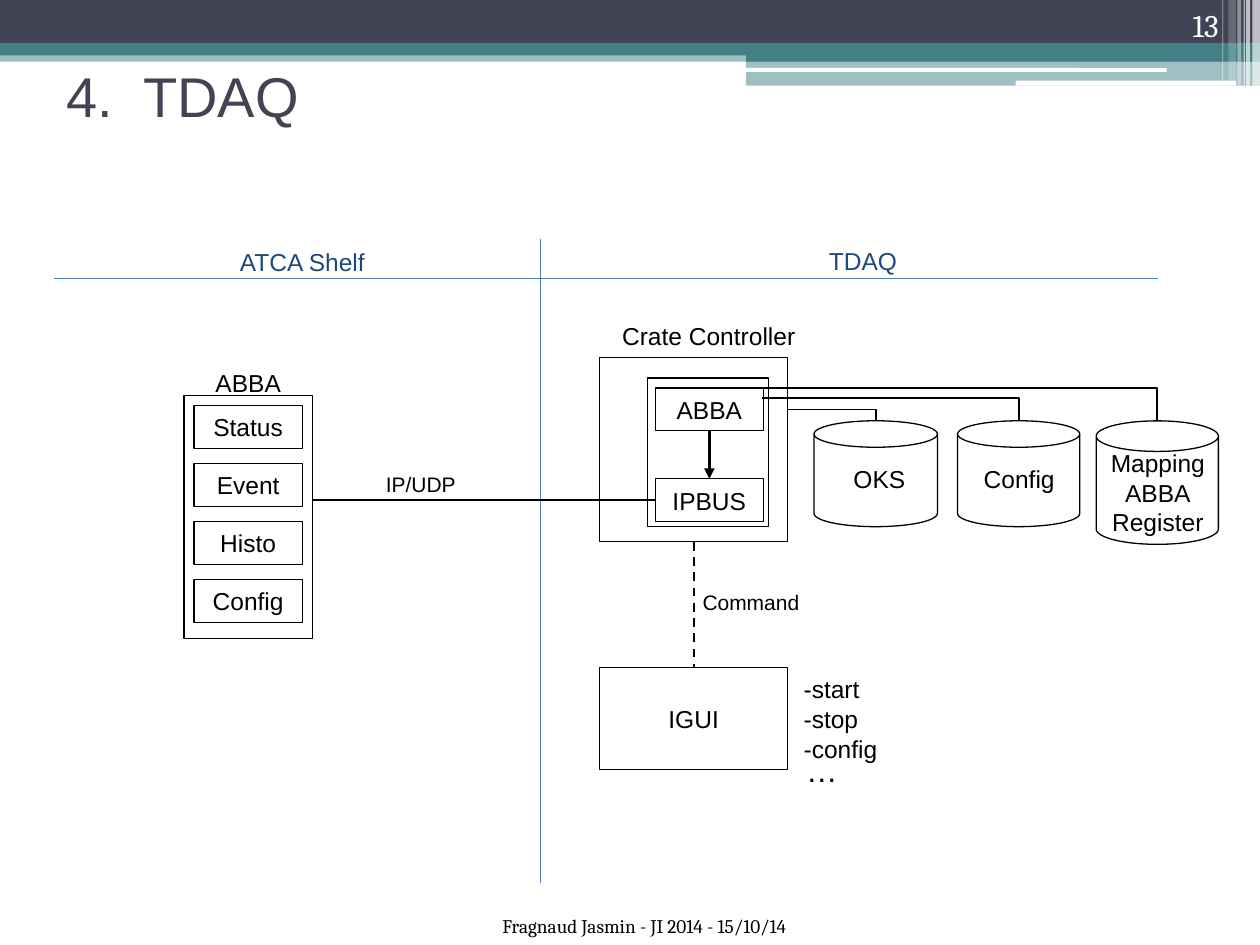
from typing import NamedTuple, Optional

from lxml import etree
from pptx import Presentation
from pptx.dml.color import RGBColor
from pptx.enum.dml import MSO_LINE
from pptx.enum.shapes import MSO_CONNECTOR, MSO_SHAPE
from pptx.enum.text import MSO_ANCHOR, PP_ALIGN
from pptx.oxml.ns import qn
from pptx.util import Inches, Pt

RECT, ROUNDED, CAN = MSO_SHAPE.RECTANGLE, MSO_SHAPE.ROUNDED_RECTANGLE, MSO_SHAPE.CAN
STRAIGHT, ELBOW = MSO_CONNECTOR.STRAIGHT, MSO_CONNECTOR.ELBOW
TOP, MIDDLE, BOTTOM = MSO_ANCHOR.TOP, MSO_ANCHOR.MIDDLE, MSO_ANCHOR.BOTTOM
LEFT, CENTER, RIGHT = PP_ALIGN.LEFT, PP_ALIGN.CENTER, PP_ALIGN.RIGHT
SIDE_TOP, SIDE_LEFT, SIDE_BOTTOM = 0, 1, 2

BLACK = RGBColor(0x00, 0x00, 0x00)
WHITE = RGBColor(0xFF, 0xFF, 0xFF)
SLATE = RGBColor(0x42, 0x44, 0x56)
TEAL = RGBColor(0x43, 0x80, 0x86)
NAVY = RGBColor(0x1F, 0x49, 0x7D)
BLUE = RGBColor(0x4B, 0x7E, 0xBC)


class Area(NamedTuple):
    left: float
    top: float
    width: float
    height: float

    def lengths(self):
        return [Inches(value) for value in self]


class Band(NamedTuple):
    area: Area
    color: RGBColor
    opacity: int = 100
    kind: int = RECT


class Label(NamedTuple):
    text: str
    area: Area
    size: float = 14
    color: RGBColor = BLACK
    font: str = "Arial"
    align: int = CENTER
    anchor: int = TOP


class Store(NamedTuple):
    can: Area
    label: Label
    link_start: tuple


BANDS = [
    Band(Area(0, 0.4, 10, 0.09), TEAL, 50),
    Band(Area(0, 0, 10, 0.34), SLATE),
    Band(Area(0, 0.34, 10, 0.1), TEAL),
    Band(Area(5.92, 0.39, 4.08, 0.1), TEAL),
    Band(Area(5.92, 0.48, 4.08, 0.2), TEAL, 50),
    Band(Area(5.91, 0.54, 3.35, 0.03), WHITE, kind=ROUNDED),
    Band(Area(8.06, 0.64, 1.75, 0.04), WHITE, kind=ROUNDED),
    Band(Area(9.94, 0, 0.06, 0.68), WHITE, 65),
    Band(Area(9.89, 0, 0.03, 0.68), WHITE, 65),
    Band(Area(9.87, 0, 0.01, 0.68), WHITE, 60),
    Band(Area(9.82, 0, 0.03, 0.68), WHITE, 40),
    Band(Area(9.75, 0, 0.06, 0.64), WHITE, 20),
    Band(Area(9.7, 0, 0.01, 0.64), WHITE, 30),
]

LABELS = [
    Label("4.  TDAQ", Area(0.43, 0.52, 9, 0.47), 32, SLATE, align=LEFT, anchor=MIDDLE),
    Label("Fragnaud Jasmin - JI 2014 - 15/10/14", Area(1.06, 7.21, 8.11, 0.29), 11, font="Cambria"),
    Label("13", Area(8.94, 0, 0.83, 0.4), 18, WHITE, "Cambria", RIGHT, BOTTOM),
    Label("ATCA Shelf", Area(1.77, 1.91, 1.26, 0.34), color=NAVY),
    Label("TDAQ", Area(6.42, 1.9, 0.86, 0.34), color=NAVY),
    Label("ABBA", Area(1.54, 2.87, 0.86, 0.34)),
    Label("Crate Controller", Area(4.52, 2.5, 2.21, 0.34)),
    Label("IP/UDP", Area(2.56, 3.69, 1.56, 0.3), 12),
    Label("Command", Area(5.4, 4.63, 1.12, 0.3), 12),
    Label("…", Area(6.3, 5.91, 0.86, 0.4), 18, align=LEFT),
]

STORES = [
    Store(Area(6.46, 3.34, 0.98, 0.84), Label("OKS", Area(6.55, 3.63, 0.86, 0.34)), (6.25, 3.25)),
    Store(Area(7.6, 3.34, 0.97, 0.84), Label("Config", Area(7.66, 3.63, 0.86, 0.34)), (6.05, 3.16)),
    Store(Area(8.7, 3.34, 0.97, 0.98),
          Label("Mapping ABBA\nRegister", Area(8.71, 3.51, 0.96, 0.81)), (6.05, 3.08)),
]

BOARD_PARTS = ["Status", "Event", "Histo", "Config"]
COMMANDS = ["-start", "-stop", "-config"]


def write(shape, label: Label) -> None:
    frame = shape.text_frame
    frame.word_wrap = True
    frame.vertical_anchor = label.anchor
    frame.text = label.text
    for para in frame.paragraphs:
        para.alignment = label.align
        para.font.size = Pt(label.size)
        para.font.name = label.font
        para.font.color.rgb = label.color


def add_label(page, label: Label) -> None:
    write(page.shapes.add_textbox(*label.area.lengths()), label)


def add_band(page, band: Band) -> None:
    shape = page.shapes.add_shape(band.kind, *band.area.lengths())
    shape.shadow.inherit = False
    shape.line.fill.background()
    shape.fill.solid()
    shape.fill.fore_color.rgb = band.color
    if band.opacity < 100:
        color = shape.fill._xPr.find(".//" + qn("a:srgbClr"))
        etree.SubElement(color, qn("a:alpha"), val=str(band.opacity * 1000))


def add_outline(page, area: Area, text: Optional[str] = None, kind: int = RECT):
    shape = page.shapes.add_shape(kind, *area.lengths())
    shape.shadow.inherit = False
    shape.fill.background()
    shape.line.color.rgb = BLACK
    shape.line.width = Pt(0.75)
    if text:
        write(shape, Label(text, area, anchor=MIDDLE))
    return shape


def add_line(page, start: tuple, end: tuple, width: float,
             color: RGBColor = BLACK, kind: int = STRAIGHT):
    line = page.shapes.add_connector(kind, *[Inches(value) for value in start + end])
    line.line.color.rgb = color
    line.line.width = Pt(width)
    etree.SubElement(line._element.spPr, qn("a:effectLst"))
    return line


def add_store(page, store: Store) -> None:
    """Draw a data store and its link, which runs right and then down."""
    can = store.can
    add_outline(page, can, kind=CAN)
    add_label(page, store.label)
    link = add_line(page, store.link_start, (can.left + can.width / 2, can.top), 1, kind=ELBOW)
    link._element.spPr.find(qn("a:prstGeom")).set("prst", "bentConnector2")


def main() -> None:
    deck = Presentation()
    deck.slide_width, deck.slide_height = Inches(10), Inches(7.5)
    page = deck.slides.add_slide(deck.slide_layouts[6])

    for band in BANDS:
        add_band(page, band)
    for label in LABELS:
        add_label(page, label)

    add_line(page, (4.29, 1.9), (4.29, 7.01), 0.75, BLUE)
    add_line(page, (0.43, 2.21), (9.19, 2.21), 0.75, BLUE)

    add_outline(page, Area(1.46, 3.14, 1.02, 1.93))
    for row, name in enumerate(BOARD_PARTS):
        add_outline(page, Area(1.54, 3.22 + 0.46 * row, 0.86, 0.34), name)

    controller = add_outline(page, Area(4.76, 2.84, 1.49, 1.46))
    add_outline(page, Area(5.14, 3, 0.96, 1.18))
    abba = add_outline(page, Area(5.2, 3.08, 0.86, 0.34), "ABBA")
    ipbus = add_outline(page, Area(5.2, 3.8, 0.86, 0.34), "IPBUS")
    igui = add_outline(page, Area(4.76, 5.3, 1.49, 0.81), "IGUI")

    for store in STORES:
        add_store(page, store)

    arrow = add_line(page, (5.63, 3.42), (5.63, 3.8), 1.5)
    arrow.begin_connect(abba, SIDE_BOTTOM)
    arrow.end_connect(ipbus, SIDE_TOP)
    etree.SubElement(arrow.line._get_or_add_ln(), qn("a:tailEnd"), type="triangle")

    network = add_line(page, (5.2, 3.97), (2.48, 3.97), 1.5)
    network.begin_connect(ipbus, SIDE_LEFT)

    command = add_line(page, (5.5, 4.3), (5.5, 5.3), 1.25)
    command.line.dash_style = MSO_LINE.DASH
    command.begin_connect(controller, SIDE_BOTTOM)
    command.end_connect(igui, SIDE_TOP)

    for row, name in enumerate(COMMANDS):
        add_label(page, Label(name, Area(6.28, 5.3 + 0.24 * row, 0.86, 0.34), align=LEFT))

    deck.save("out.pptx")


if __name__ == "__main__":
    main()
